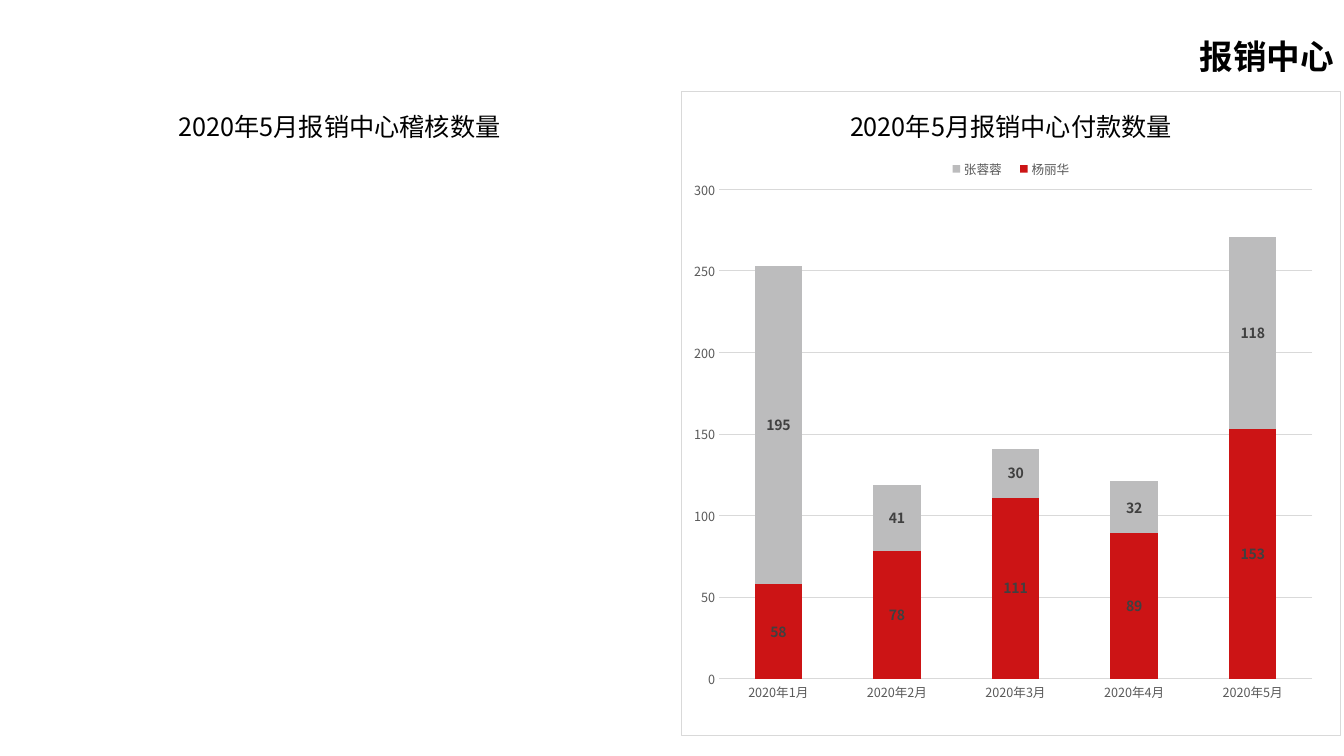
from dataclasses import dataclass

from lxml import etree
from pptx import Presentation
from pptx.chart.data import CategoryChartData
from pptx.dml.color import RGBColor
from pptx.enum.chart import XL_CHART_TYPE, XL_LABEL_POSITION, XL_LEGEND_POSITION, XL_TICK_MARK
from pptx.enum.text import MSO_ANCHOR, MSO_AUTO_SIZE, PP_ALIGN
from pptx.oxml import parse_xml
from pptx.oxml.ns import nsdecls, qn
from pptx.util import Pt

STACKED = XL_CHART_TYPE.COLUMN_STACKED
LABEL_CENTER = XL_LABEL_POSITION.CENTER
LEGEND_RIGHT = XL_LEGEND_POSITION.RIGHT
NO_TICK = XL_TICK_MARK.NONE
MIDDLE = MSO_ANCHOR.MIDDLE
NO_AUTOFIT = MSO_AUTO_SIZE.NONE
GROW = MSO_AUTO_SIZE.SHAPE_TO_FIT_TEXT
CENTER, RIGHT = PP_ALIGN.CENTER, PP_ALIGN.RIGHT

EMU_PER_PX = 914400 / 100.8
SLIDE_SIZE = (1344, 756)
TITLE_BOX = (1152, 35, 192, 48)
AUDIT_PANEL = (10, 91, 660, 645)
PAYMENT_PANEL = (681, 91, 660, 645)
HEADING_HEIGHT = 55

MONTHS = [f"2020年{month}月" for month in range(1, 6)]
PAYMENTS = {
    "杨丽华": (58, 78, 111, 89, 153),
    "张蓉蓉": (195, 41, 30, 32, 118),
}


@dataclass(frozen=True)
class Theme:
    face: str = "Noto Sans CJK SC"
    text: str = "000000"
    axis_text: str = "595959"
    label_text: str = "404040"
    rule: str = "D9D9D9"
    paper: str = "FFFFFF"
    staff: tuple = ("CC1415", "BCBCBD")
    title_size: int = 24
    heading_size: int = 18
    label_size: int = 10
    axis_size: int = 9
    rule_width: float = 0.75


THEME = Theme()


def px(*lengths):
    return [round(length * EMU_PER_PX) for length in lengths]


def style_font(font, size, color, bold=False):
    font.size = Pt(size)
    font.bold = bold
    font.color.rgb = RGBColor.from_string(color)
    font.name = THEME.face
    east_asian = etree.Element(qn("a:ea"), typeface=THEME.face)
    font._rPr.find(qn("a:latin")).addnext(east_asian)


def style_rule(line):
    line.color.rgb = RGBColor.from_string(THEME.rule)
    line.width = Pt(THEME.rule_width)


def set_layout(parent, index, box, target=""):
    for layout in parent.findall(qn("c:layout")):
        parent.remove(layout)
    sides = "".join(f'<c:{side} val="{share}"/>' for side, share in zip("xywh", box))
    parent.insert(index, parse_xml(
        f'<c:layout {nsdecls("c")}><c:manualLayout>{target}'
        f'<c:xMode val="edge"/><c:yMode val="edge"/>{sides}'
        "</c:manualLayout></c:layout>"))


def add_title(slide, box, wording):
    title = slide.shapes.title
    title.left, title.top, title.width, title.height = px(*box)
    frame = title.text_frame
    frame.text = wording
    frame.auto_size = NO_AUTOFIT
    frame.vertical_anchor = MIDDLE
    paragraph = frame.paragraphs[0]
    paragraph.alignment = RIGHT
    paragraph.line_spacing = 0.9
    style_font(paragraph.font, THEME.title_size, THEME.text, bold=True)


def add_heading(slide, panel, width, wording):
    left, top, panel_width, _ = panel
    heading_left = left + (panel_width - width) // 2
    heading = slide.shapes.add_textbox(*px(heading_left, top, width, HEADING_HEIGHT))
    frame = heading.text_frame
    frame.word_wrap = True
    frame.auto_size = GROW
    frame.text = wording
    paragraph = frame.paragraphs[0]
    paragraph.alignment = CENTER
    paragraph.line_spacing = 1.5
    style_font(paragraph.font, THEME.heading_size, THEME.text)


def style_axes(chart):
    months, amounts = chart.category_axis, chart.value_axis
    for axis in (months, amounts):
        axis.major_tick_mark = axis.minor_tick_mark = NO_TICK
        style_font(axis.tick_labels.font, THEME.axis_size, THEME.axis_text)
    style_rule(months.format.line)
    amounts.format.line.fill.background()
    amounts.minimum_scale, amounts.maximum_scale, amounts.major_unit = 0, 300, 50
    amounts.has_major_gridlines = True
    style_rule(amounts.major_gridlines.format.line)


def style_frame(chart):
    border = round(Pt(THEME.rule_width))
    chart._chartSpace.find(qn("c:chart")).addnext(parse_xml(
        f'<c:spPr {nsdecls("c", "a")}>'
        f'<a:solidFill><a:srgbClr val="{THEME.paper}"/></a:solidFill>'
        f'<a:ln w="{border}"><a:solidFill><a:srgbClr val="{THEME.rule}"/></a:solidFill></a:ln>'
        "</c:spPr>"))


def add_payment_chart(slide, box):
    payments = CategoryChartData()
    payments.categories = MONTHS
    for person, amounts in PAYMENTS.items():
        payments.add_series(person, amounts)
    chart = slide.shapes.add_chart(STACKED, *px(*box), payments).chart
    chart.has_title = False
    style_font(chart.font, THEME.label_size, THEME.text)
    style_frame(chart)
    style_axes(chart)

    columns = chart.plots[0]
    columns.gap_width, columns.overlap = 150, 100
    columns.vary_by_categories = False
    for person, color in zip(columns.series, THEME.staff):
        person.format.fill.solid()
        person.format.fill.fore_color.rgb = RGBColor.from_string(color)
        labels = person.data_labels
        labels.show_value = True
        labels.position = LABEL_CENTER
        style_font(labels.font, THEME.label_size, THEME.label_text, bold=True)

    chart.has_legend = True
    legend = chart.legend
    legend.position = LEGEND_RIGHT
    legend.include_in_layout = False
    style_font(legend.font, THEME.axis_size, THEME.axis_text)
    set_layout(legend._element, 1, (0.39, 0.1, 0.22, 0.04))
    plot_area = chart._chartSpace.find(".//" + qn("c:plotArea"))
    set_layout(plot_area, 0, (0.057, 0.152, 0.9, 0.76), '<c:layoutTarget val="inner"/>')


def main():
    deck = Presentation()
    deck.slide_width, deck.slide_height = px(*SLIDE_SIZE)
    slide = deck.slides.add_slide(deck.slide_layouts[5])
    add_title(slide, TITLE_BOX, "报销中心")
    add_heading(slide, AUDIT_PANEL, 361, "2020年5月报销中心稽核数量")
    add_payment_chart(slide, PAYMENT_PANEL)
    add_heading(slide, PAYMENT_PANEL, 372, "2020年5月报销中心付款数量")
    deck.save("out.pptx")


if __name__ == "__main__":
    main()
